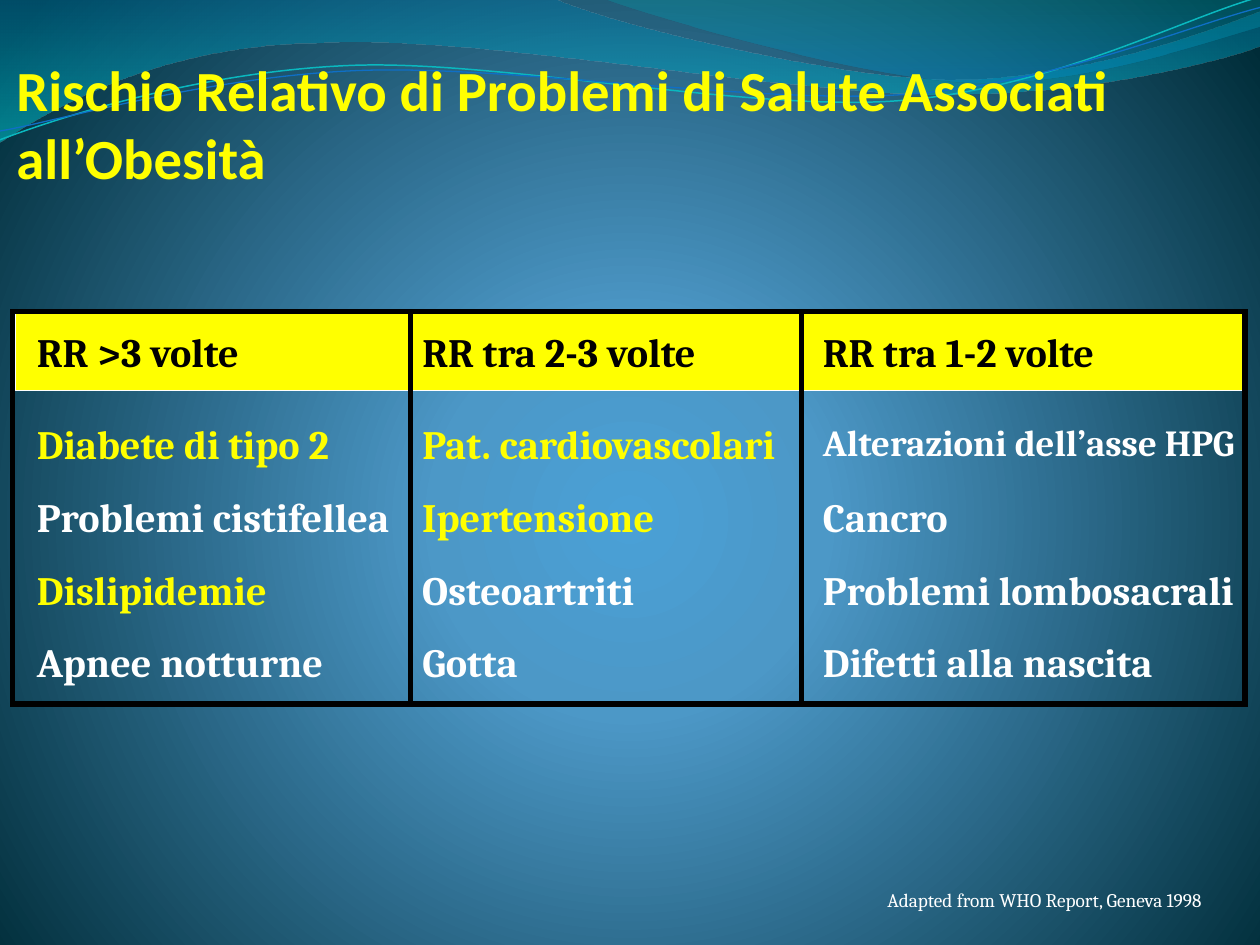
import dataclasses

import lxml.etree
import pptx
import pptx.dml.color
import pptx.enum.shapes
import pptx.enum.text
import pptx.oxml.ns
import pptx.util

Pt = pptx.util.Pt
qn = pptx.oxml.ns.qn


@dataclasses.dataclass(frozen=True)
class Theme:
    yellow: str = "FFFF00"
    white: str = "FFFFFF"
    black: str = "000000"
    header_ink: str = "010000"
    wave_teal: str = "0AB8BF"
    wave_blue: str = "0F6FC6"
    # Gradient stops: position %, colour, opacity %
    background: tuple = ((0, "4AA0D6", 100), (25, "4C98C7", 100), (100, "002C38", 100))
    wide_wave: tuple = ((0, "0074A1", 45), (100, "00C6CF", 55))
    right_wave: tuple = ((0, "00A1A9", 30), (80, "008BBF", 45))
    title_font: str = "Calibri"
    body_font: str = "Cambria"
    title_size: float = 32.4
    body_size: float = 23
    tight_size: float = 21
    source_size: float = 11


def rgb(value):
    return pptx.dml.color.RGBColor.from_string(value)


class Deck:
    def __init__(self, prs, theme):
        self.theme = theme
        self.s = prs.slides.add_slide(prs.slide_layouts[6])

    def gradient(self, fill, element, stops, radial=False):
        fill.gradient()
        grad = element.find(".//" + qn("a:gradFill"))
        del grad[:]
        gs_list = lxml.etree.SubElement(grad, qn("a:gsLst"))
        for pos, color, alpha in stops:
            gs = lxml.etree.SubElement(gs_list, qn("a:gs"), pos=str(pos * 1000))
            clr = lxml.etree.SubElement(gs, qn("a:srgbClr"), val=color)
            if alpha < 100:
                lxml.etree.SubElement(clr, qn("a:alpha"), val=str(alpha * 1000))
        if radial:
            way = lxml.etree.SubElement(grad, qn("a:path"), path="circle")
            lxml.etree.SubElement(way, qn("a:fillToRect"),
                                  l="10000", t="110000", r="10000", b="100000")
        else:
            lxml.etree.SubElement(grad, qn("a:lin"), ang="5400000", scaled="0")

    def background(self):
        self.gradient(self.s.background.fill, self.s.element, self.theme.background, True)

    def paint(self, sp, fill=None, line=None, weight=1):
        sp.shadow.inherit = False
        if fill:
            sp.fill.solid()
            sp.fill.fore_color.rgb = rgb(fill)
        else:
            sp.fill.background()
        if line:
            sp.line.color.rgb = rgb(line)
            sp.line.width = Pt(weight)
        else:
            sp.line.fill.background()

    def wave(self, start, *segments, stops=None, line=None, weight=1, rotation=0):
        """Segments hold one point (line) or three (cubic curve); stops close the band."""
        builder = self.s.shapes.build_freeform(Pt(start[0]), Pt(start[1]))
        builder.add_line_segments([(Pt(x), Pt(y)) for seg in segments for x, y in seg],
                                  close=bool(stops))
        sp = builder.convert_to_shape()
        lines = iter(sp.element.findall(".//" + qn("a:lnTo")))
        for seg in segments:
            group = [next(lines) for point in seg]
            if len(group) == 3:
                curve = lxml.etree.Element(qn("a:cubicBezTo"))
                group[0].addprevious(curve)
                for step in group:
                    curve.append(step[0])
                    step.getparent().remove(step)
        sp.rotation = rotation
        self.paint(sp, line=line, weight=weight)
        if stops:
            self.gradient(sp.fill, sp.element, stops)

    def rect(self, x, y, w, h, **style):
        kind = pptx.enum.shapes.MSO_SHAPE.RECTANGLE
        sp = self.s.shapes.add_shape(kind, Pt(x), Pt(y), Pt(w), Pt(h))
        self.paint(sp, **style)
        lxml.etree.SubElement(sp.element.spPr.find(qn("a:ln")), qn("a:miter"), lim="800000")

    def rule(self, x, top, bottom, color, weight):
        kind = pptx.enum.shapes.MSO_CONNECTOR.STRAIGHT
        sp = self.s.shapes.add_connector(kind, Pt(x), Pt(top), Pt(x), Pt(bottom))
        sp.line.color.rgb = rgb(color)
        sp.line.width = Pt(weight)
        lxml.etree.SubElement(sp.element.spPr, qn("a:effectLst"))

    def text(self, words, x, y, w, h, color, size, font=None, bold=True,
             inset=(0, 0), frame=None):
        tf = self.s.shapes.add_textbox(Pt(x), Pt(y), Pt(w), Pt(h)).text_frame
        side, end = inset
        layout = {
            "margin_left": Pt(side), "margin_right": Pt(side),
            "margin_top": Pt(end), "margin_bottom": Pt(end),
            "word_wrap": False,
            "auto_size": pptx.enum.text.MSO_AUTO_SIZE.SHAPE_TO_FIT_TEXT,
        }
        for name, value in (layout | (frame or {})).items():
            setattr(tf, name, value)
        r = tf.paragraphs[0].add_run()
        r.text = words
        style = {"name": font or self.theme.body_font, "size": Pt(size), "bold": bold}
        for name, value in style.items():
            setattr(r.font, name, value)
        r.font.color.rgb = rgb(color)


def draw_waves(deck, theme):
    deck.wave(
        (0, -0.7), [(316.8, -0.7)],
        [(342.7, 12.2), (478.1, 45.4), (545.8, 45.4)],
        [(614.2, 45.4), (689.8, 18.7), (720, 6.5)],
        [(720.7, 25.9)],
        [(707.8, 31.7), (626.4, 54.7), (537.1, 54)],
        [(447.8, 54), (275, 20.2), (185, 24.5)],
        [(92.9, 25.2), (33.1, 59.8), (-0.7, 81.4)],
        [(0, -0.7)], stops=theme.wide_wave)
    deck.wave(
        (344.9, -0.7),
        [(366.5, 7.9), (491, 44.6), (553.7, 46.8)],
        [(616.3, 49.7), (691.9, 23), (720, 15.1)],
        [(720, 0)], [(344.9, -0.7)], stops=theme.right_wave)
    deck.wave(
        (-1.4, 62.9),
        [(33.7, 51.6), (114, 29.5), (199.8, 29.9)],
        [(284.8, 30.3), (425.8, 67.2), (512.4, 64.8)],
        [(599, 62.4), (676.4, 25.7), (720.2, 15.6)],
        line=theme.wave_teal, weight=0.85, rotation=357.3)
    deck.wave(
        (-1.2, 57.9),
        [(33, 53.7), (118.3, 32.5), (204, 33)],
        [(290.5, 33.5), (429, 63), (515.5, 61.4)],
        [(601.4, 59.6), (678.5, 30.1), (721.4, 21.3)],
        line=theme.wave_blue, weight=0.75, rotation=357.3)


def draw_risks(deck, theme):
    """Three risk columns: left edge, then (wording, width) from header down."""
    columns = [
        (21.1, [("RR >3 volte", 125), ("Diabete di tipo 2", 177),
                ("Problemi cistifellea", 210), ("Dislipidemie", 135),
                ("Apnee notturne", 169)]),
        (241.3, [("RR tra 2-3 volte", 168), ("Pat. cardiovascolari", 220),
                 ("Ipertensione", 136), ("Osteoartriti", 124), ("Gotta", 60)]),
        (470.2, [("RR tra 1-2 volte", 168), ("Alterazioni dell’asse HPG", 253),
                 ("Cancro", 79), ("Problemi lombosacrali", 246),
                 ("Difetti alla nascita", 195)]),
    ]
    highlights = {"Diabete di tipo 2", "Dislipidemie", "Pat. cardiovascolari", "Ipertensione"}
    tight = {"Alterazioni dell’asse HPG"}
    header_top, first_row, row_step = 186.9, 239.8, 41.5

    for x, cells in columns:
        for i, (words, w) in enumerate(cells):
            y = first_row + (i - 1) * row_step if i else header_top
            color = theme.yellow if words in highlights else theme.white
            size = theme.tight_size if words in tight else theme.body_size
            deck.text(words, x, y, w, size * 1.2, color if i else theme.header_ink, size)
    deck.rect(7.2, 177.8, 704.2, 224.6, line=theme.black, weight=3)
    for x in (234.7, 457.9):
        deck.rule(x, 177, 402.4, theme.black, 3)


def main():
    prs = pptx.Presentation()
    prs.slide_width, prs.slide_height = Pt(720), Pt(540)
    theme = Theme()
    deck = Deck(prs, theme)
    deck.background()
    draw_waves(deck, theme)
    deck.rect(8.6, 179.3, 702.7, 44, fill=theme.yellow, line=theme.white, weight=0.75)
    deck.text("Rischio Relativo di Problemi di Salute Associati all’Obesità",
              2.9, 22.7, 713.5, 90, theme.yellow, theme.title_size, theme.title_font,
              inset=(6.5, 3.6),
              frame={"word_wrap": True,
                     "auto_size": pptx.enum.text.MSO_AUTO_SIZE.NONE,
                     "vertical_anchor": pptx.enum.text.MSO_ANCHOR.BOTTOM})
    draw_risks(deck, theme)
    deck.text("Adapted from WHO Report, Geneva 1998", 500.6, 504, 210, 21.6,
              theme.white, theme.source_size, bold=False, inset=(6.5, 3.6))
    prs.save("out.pptx")


if __name__ == "__main__":
    main()
